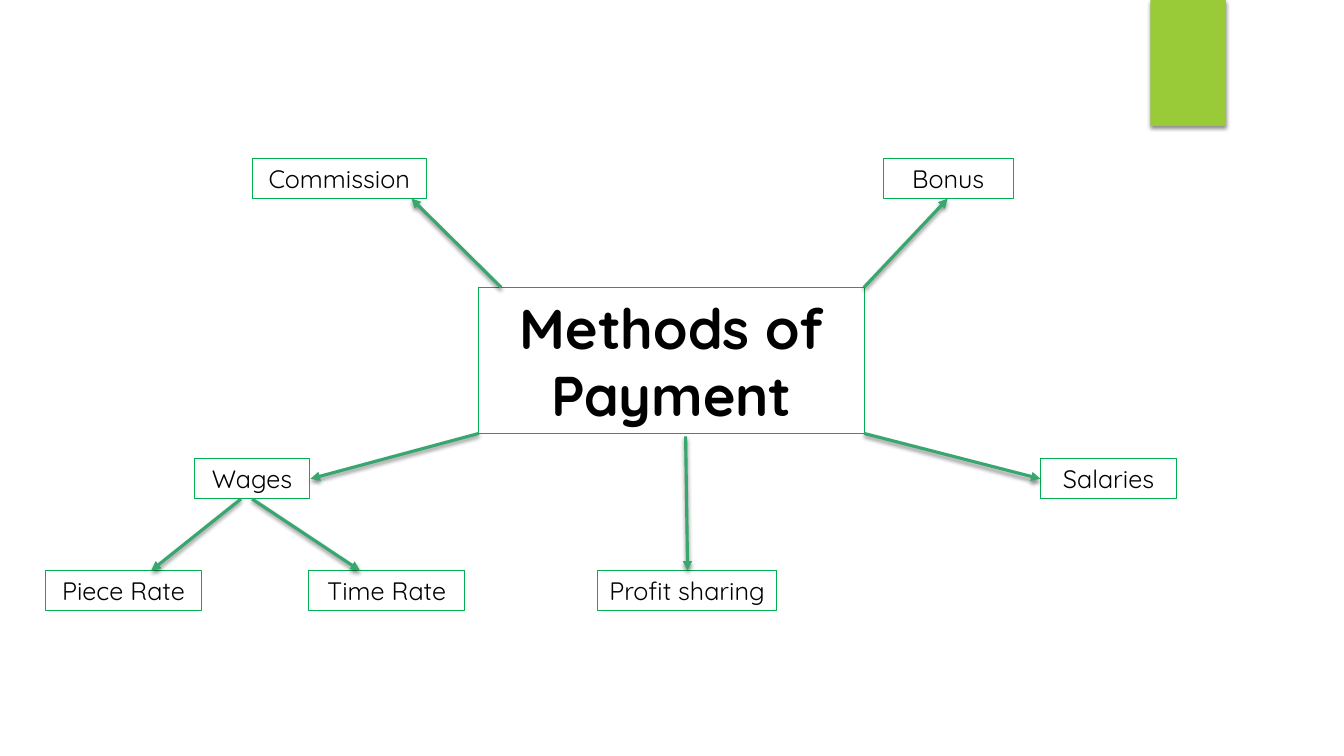
"""Build a mind map slide of the methods of payment."""
from pptx import Presentation
from pptx.dml.color import RGBColor
from pptx.enum.shapes import MSO_CONNECTOR, MSO_SHAPE
from pptx.enum.text import MSO_ANCHOR, MSO_AUTO_SIZE, PP_ALIGN
from pptx.oxml import parse_xml
from pptx.oxml.ns import nsdecls
from pptx.util import Inches, Pt

COLORS = {"accent": "99CB38", "border": "00B050", "arrow": "37A76F", "text": "000000"}
FONT = "Quicksand"
LABEL_HEIGHT = 0.4
TOP_ROW, MIDDLE_ROW, BOTTOM_ROW = 1.57, 4.55, 5.66
HUB_LEFT, HUB_TOP, HUB_WIDTH, HUB_HEIGHT = 4.75, 2.85, 3.82, 1.45
HUB_RIGHT, HUB_BOTTOM = HUB_LEFT + HUB_WIDTH, HUB_TOP + HUB_HEIGHT

LABELS = [
    ("Commission", 2.5, TOP_ROW, 1.73),
    ("Bonus", 8.76, TOP_ROW, 1.29),
    ("Wages", 1.93, MIDDLE_ROW, 1.14),
    ("Salaries", 10.32, MIDDLE_ROW, 1.35),
    ("Piece Rate", 0.45, BOTTOM_ROW, 1.55),
    ("Time Rate", 3.06, BOTTOM_ROW, 1.55),
    ("Profit sharing", 5.93, BOTTOM_ROW, 1.77),
]
TOP_ROW_END = TOP_ROW + LABEL_HEIGHT
MIDDLE_ROW_CENTER = MIDDLE_ROW + LABEL_HEIGHT / 2
MIDDLE_ROW_END = MIDDLE_ROW + LABEL_HEIGHT
ARROWS = [
    ((4.97, HUB_TOP), (4.08, TOP_ROW_END)),
    ((HUB_RIGHT, HUB_TOP), (9.4, TOP_ROW_END)),
    ((HUB_LEFT, HUB_BOTTOM), (3.08, MIDDLE_ROW_CENTER)),
    ((HUB_RIGHT, HUB_BOTTOM), (10.32, MIDDLE_ROW_CENTER)),
    ((6.8, 4.33), (6.82, BOTTOM_ROW)),
    ((2.39, MIDDLE_ROW_END), (1.5, BOTTOM_ROW)),
    ((2.5, MIDDLE_ROW_END), (3.57, BOTTOM_ROW)),
]


def color(name):
    """Return the named colour."""
    return RGBColor.from_string(COLORS[name])


def add_shadow(shape):
    """Give a shape a soft shadow straight below it."""
    shape._element.spPr.append(parse_xml(
        f'<a:effectLst {nsdecls("a")}>'
        f'<a:outerShdw blurRad="{Pt(3)}" dist="{Pt(2)}" dir="5400000" rotWithShape="0">'
        '<a:srgbClr val="000000"><a:alpha val="45000"/></a:srgbClr>'
        '</a:outerShdw></a:effectLst>'))


def write_text(shape, text, *, size, bold=False):
    """Write centred text in a shape."""
    frame = shape.text_frame
    frame.text = text
    frame.word_wrap = True
    frame.auto_size = MSO_AUTO_SIZE.NONE
    frame.vertical_anchor = MSO_ANCHOR.MIDDLE
    paragraph = frame.paragraphs[0]
    paragraph.alignment = PP_ALIGN.CENTER
    paragraph.line_spacing = 1.0
    font = paragraph.runs[0].font
    font.name = FONT
    font.size = Pt(size)
    font.bold = bold
    font.color.rgb = color("text")


def outline(shape):
    """Draw the thin green border of a box."""
    shape.line.color.rgb = color("border")
    shape.line.width = Pt(0.75)


def add_ribbon(slide):
    """Add the green block at the top edge."""
    ribbon = slide.shapes.add_shape(
        MSO_SHAPE.RECTANGLE, Inches(11.41), 0, Inches(0.75), Inches(1.25))
    ribbon.fill.solid()
    ribbon.fill.fore_color.rgb = color("accent")
    ribbon.line.fill.background()
    add_shadow(ribbon)


def place_title(slide, text):
    """Place the title as the hub of the map."""
    title = slide.shapes.title
    title.left, title.top = Inches(HUB_LEFT), Inches(HUB_TOP)
    title.width, title.height = Inches(HUB_WIDTH), Inches(HUB_HEIGHT)
    outline(title)
    write_text(title, text, size=40, bold=True)


def add_label(slide, text, left, top, width):
    """Add one bordered label."""
    label = slide.shapes.add_textbox(
        Inches(left), Inches(top), Inches(width), Inches(LABEL_HEIGHT))
    outline(label)
    write_text(label, text, size=18)


def add_arrow(slide, start, end):
    """Add one arrow with its head at the end point."""
    points = [Inches(value) for value in (*start, *end)]
    arrow = slide.shapes.add_connector(MSO_CONNECTOR.STRAIGHT, *points)
    arrow.line.color.rgb = color("arrow")
    arrow.line.width = Pt(2.25)
    arrow.line._get_or_add_ln().append(
        parse_xml(f'<a:tailEnd {nsdecls("a")} type="triangle"/>'))
    add_shadow(arrow)


def main():
    """Build and save the slide."""
    presentation = Presentation()
    presentation.slide_width = Inches(13.33)
    presentation.slide_height = Inches(7.5)
    slide = presentation.slides.add_slide(presentation.slide_layouts[5])
    add_ribbon(slide)
    place_title(slide, "Methods of Payment")
    for label in LABELS:
        add_label(slide, *label)
    for start, end in ARROWS:
        add_arrow(slide, start, end)
    presentation.save("out.pptx")


if __name__ == "__main__":
    main()
